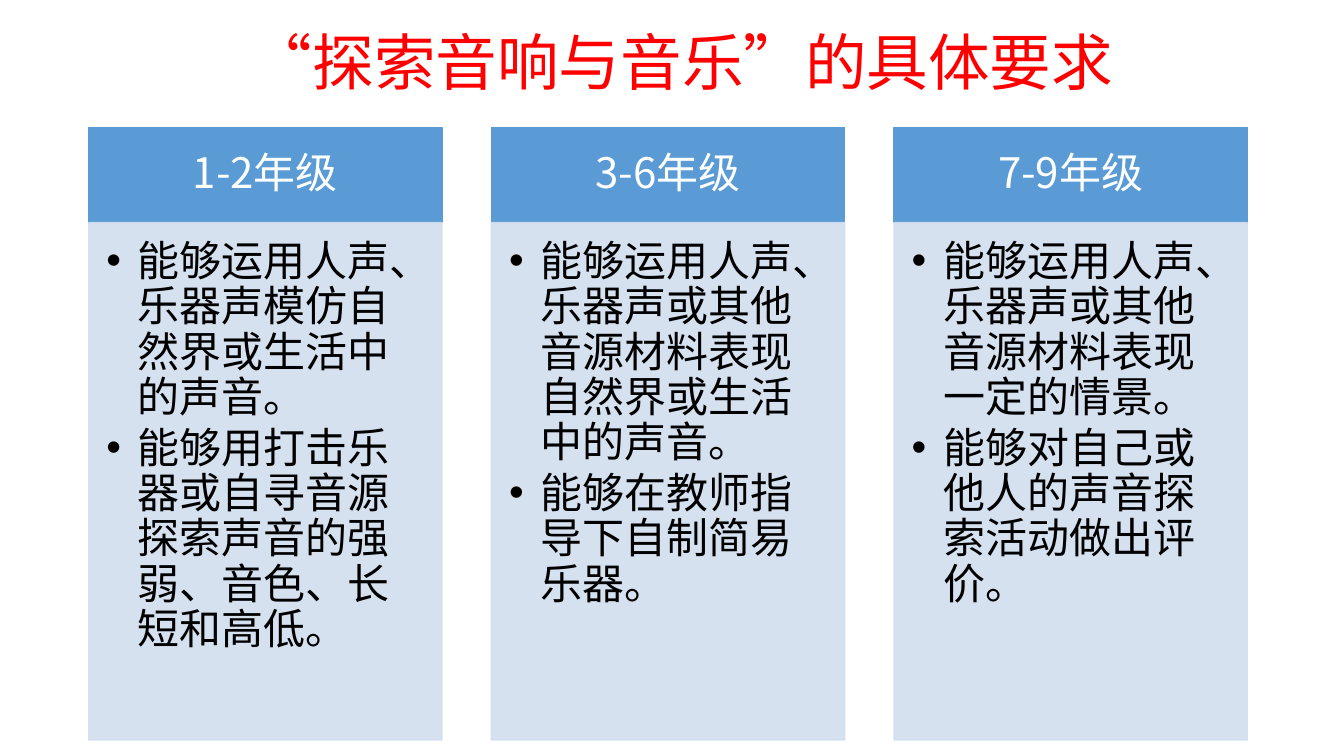
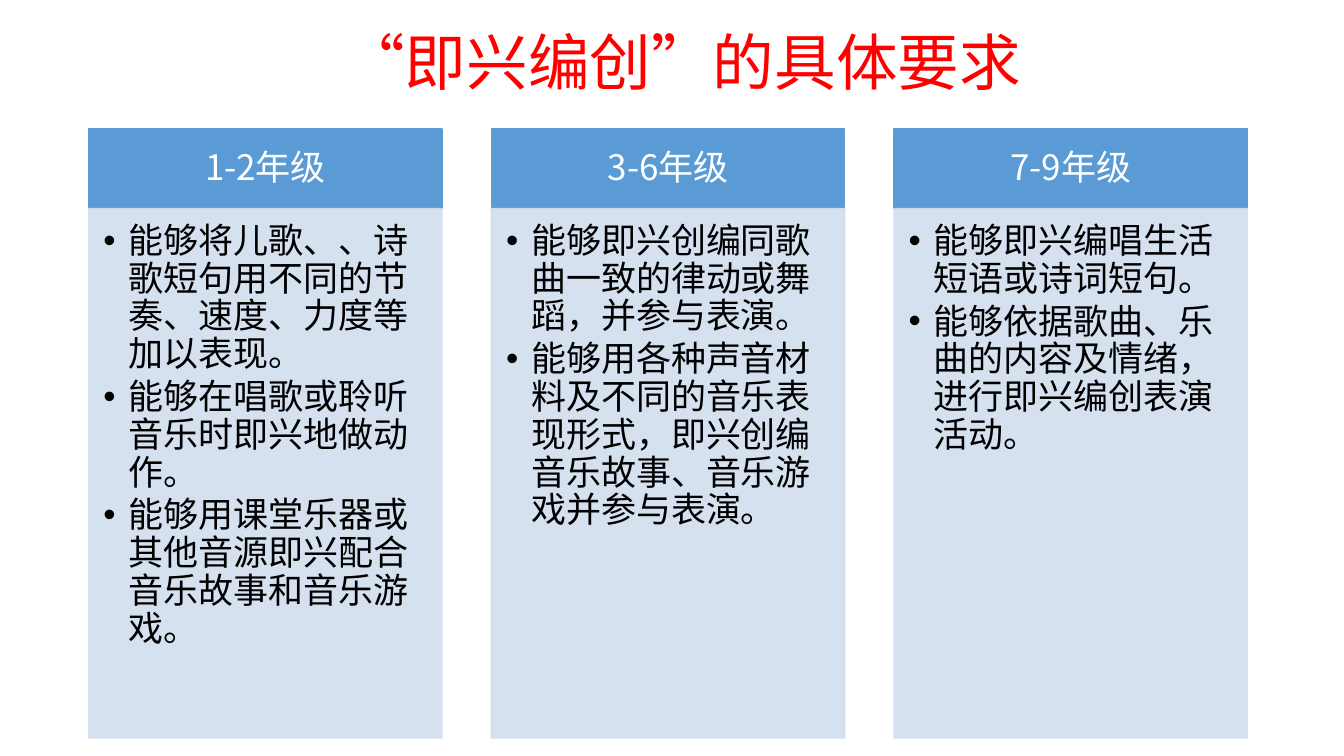
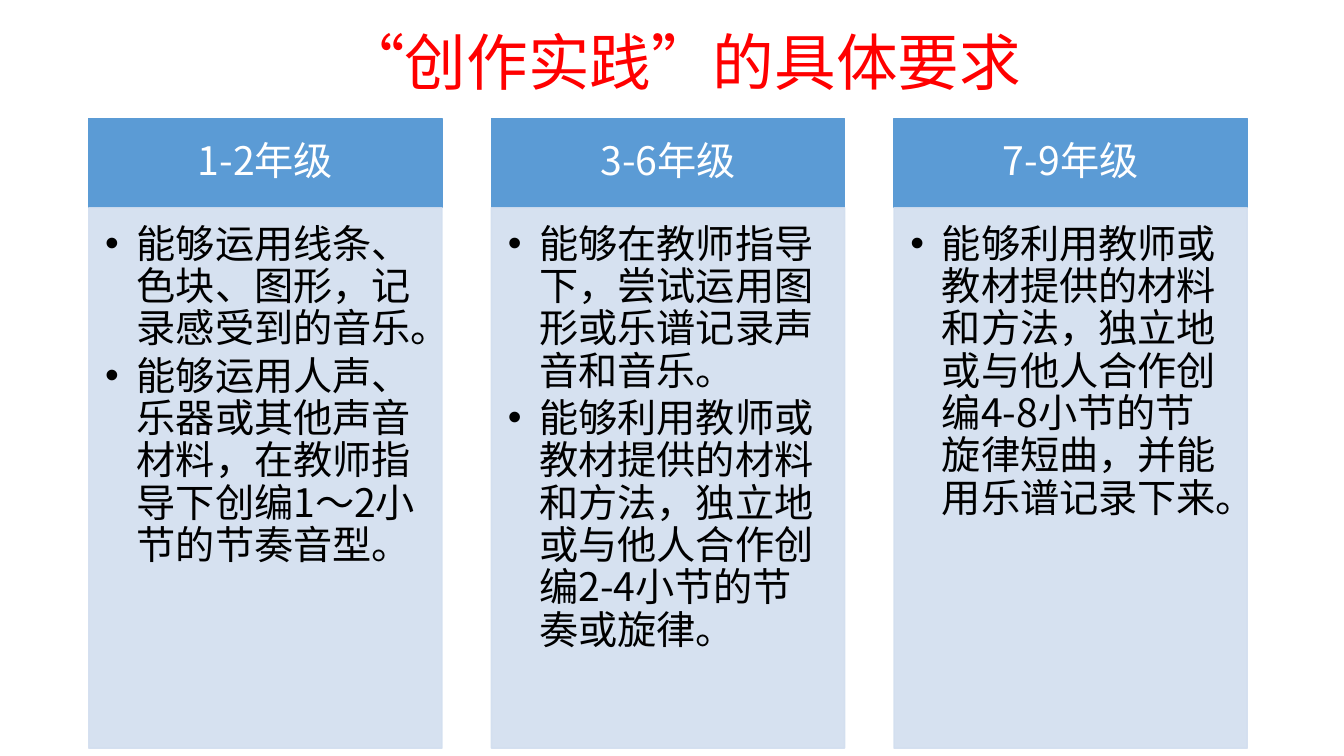
import lxml.etree
import pptx
import pptx.dml.color
import pptx.enum.lang
import pptx.enum.shapes
import pptx.enum.text
import pptx.oxml.ns
import pptx.util

Pt = pptx.util.Pt
qn = pptx.oxml.ns.qn

GRADES = ["1-2年级", "3-6年级", "7-9年级"]

# Each slide: title, text size, bullet indent, top and bottom of the columns, lists
SLIDES = [
    ("“探索音响与音乐”的具体要求", 30, 22.5, 90.9, 528.5, [
        ["能够运用人声、乐器声模仿自然界或生活中的声音。",
         "能够用打击乐器或自寻音源探索声音的强弱、音色、长短和高低。"],
        ["能够运用人声、乐器声或其他音源材料表现自然界或生活中的声音。",
         "能够在教师指导下自制简易乐器。"],
        ["能够运用人声、乐器声或其他音源材料表现一定的情景。",
         "能够对自己或他人的声音探索活动做出评价。"],
    ]),
    ("“即兴编创”的具体要求", 25, 18, 92.2, 527.2, [
        ["能够将儿歌、、诗歌短句用不同的节奏、速度、力度等加以表现。",
         "能够在唱歌或聆听音乐时即兴地做动作。",
         "能够用课堂乐器或其他音源即兴配合音乐故事和音乐游戏。"],
        ["能够即兴创编同歌曲一致的律动或舞蹈，并参与表演。",
         "能够用各种声音材料及不同的音乐表现形式，即兴创编音乐故事、音乐游戏并参与表演。"],
        ["能够即兴编唱生活短语或诗词短句。",
         "能够依据歌曲、乐曲的内容及情绪，进行即兴编创表演活动。"],
    ]),
    ("“创作实践”的具体要求", 28, 22.5, 84.8, 534.4, [
        ["能够运用线条、色块、图形，记录感受到的音乐。",
         "能够运用人声、乐器或其他声音材料，在教师指导下创编1～2小节的节奏音型。"],
        ["能够在教师指导下，尝试运用图形或乐谱记录声音和音乐。",
         "能够利用教师或教材提供的材料和方法，独立地或与他人合作创编2-4小节的节奏或旋律。"],
        ["能够利用教师或教材提供的材料和方法，独立地或与他人合作创编4-8小节的节旋律短曲，并能用乐谱记录下来。"],
    ]),
]


def color(hex_string):
    return pptx.dml.color.RGBColor.from_string(hex_string)


class Deck:
    FONT = "Noto Sans CJK SC"
    RED, BLUE, PALE = "FF0000", "5B9BD5", "D2DEEF"
    WHITE, BLACK = "FFFFFF", "000000"
    LEFT, WIDTH, GAP = 63.4, 252.3, 35.3
    HEADER_RATIO = 2.27  # header height per point of text size

    def __init__(self):
        self.deck = pptx.Presentation()
        self.deck.slide_width, self.deck.slide_height = Pt(960), Pt(540)
        self.layout = self.deck.slide_layouts.get_by_name("Title Only")
        # The title frame is shared through the layout
        title = self.layout.placeholders[0]
        title.left, title.top, title.width, title.height = Pt(73.5), Pt(9.3), Pt(828), Pt(75)

    def set_text(self, frame, lines, size, hex_string, align, anchor):
        """Fill a text frame and format every paragraph and run."""
        frame.text = "\n".join(lines)
        frame.word_wrap = True
        frame.auto_size = pptx.enum.text.MSO_AUTO_SIZE.NONE
        frame.vertical_anchor = anchor
        for para in frame.paragraphs:
            para.alignment = align
            para.line_spacing = 0.9
            for span in para.runs:
                span.font.size = Pt(size)
                span.font.name = self.FONT
                span.font.color.rgb = color(hex_string)
                span.font.language_id = pptx.enum.lang.MSO_LANGUAGE_ID.SIMPLIFIED_CHINESE
                east_asian = lxml.etree.SubElement(span.font._element, qn("a:ea"))
                east_asian.set("typeface", self.FONT)

    def slide(self, title):
        self.page = self.deck.slides.add_slide(self.layout)
        self.set_text(self.page.shapes.title.text_frame, [title], 44, self.RED,
                      pptx.enum.text.PP_ALIGN.CENTER, pptx.enum.text.MSO_ANCHOR.MIDDLE)

    def panel(self, left, top, height, hex_string, insets, opacity=100):
        box = self.page.shapes.add_shape(
            pptx.enum.shapes.MSO_SHAPE.RECTANGLE, Pt(left), Pt(top), Pt(self.WIDTH), Pt(height))
        box.shadow.inherit = False
        box.fill.solid()
        box.fill.fore_color.rgb = color(hex_string)
        box.line.color.rgb = color(hex_string)
        box.line.width = Pt(1)
        if opacity < 100:
            for tone in box._element.spPr.iter(qn("a:srgbClr")):
                lxml.etree.SubElement(tone, qn("a:alpha")).set("val", str(opacity * 1000))
        frame = box.text_frame
        (frame.margin_left, frame.margin_top,
         frame.margin_right, frame.margin_bottom) = [Pt(inset) for inset in insets]
        return frame

    def header(self, left, top, height, text, size):
        side, edge = 0.56 * size, 0.32 * size
        frame = self.panel(left, top, height, self.BLUE, (side, edge, side, edge))
        self.set_text(frame, [text], size, self.WHITE,
                      pptx.enum.text.PP_ALIGN.CENTER, pptx.enum.text.MSO_ANCHOR.MIDDLE)

    def bullets(self, left, top, height, lines, size, indent):
        insets = [ratio * size for ratio in (0.42, 0.42, 0.56, 0.63)]
        frame = self.panel(left, top, height, self.PALE, insets, opacity=90)
        self.set_text(frame, lines, size, self.BLACK,
                      pptx.enum.text.PP_ALIGN.LEFT, pptx.enum.text.MSO_ANCHOR.TOP)
        for para in frame.paragraphs:
            para.space_after = Pt(3.6)
            properties = para._p.get_or_add_pPr()
            properties.set("marL", str(int(Pt(indent))))
            properties.set("indent", str(-int(Pt(indent))))
            lxml.etree.SubElement(properties, qn("a:buFont")).set("typeface", "Arial")
            lxml.etree.SubElement(properties, qn("a:buChar")).set("char", "•")

    def columns(self, size, indent, top, bottom, lists):
        height = self.HEADER_RATIO * size
        for index, (grade, lines) in enumerate(zip(GRADES, lists)):
            left = self.LEFT + index * (self.WIDTH + self.GAP)
            self.header(left, top, height, grade, size)
            self.bullets(left, top + height, bottom - top - height, lines, size, indent)


def main():
    deck = Deck()
    for title, *content in SLIDES:
        deck.slide(title)
        deck.columns(*content)
    deck.deck.save("out.pptx")


if __name__ == "__main__":
    main()
